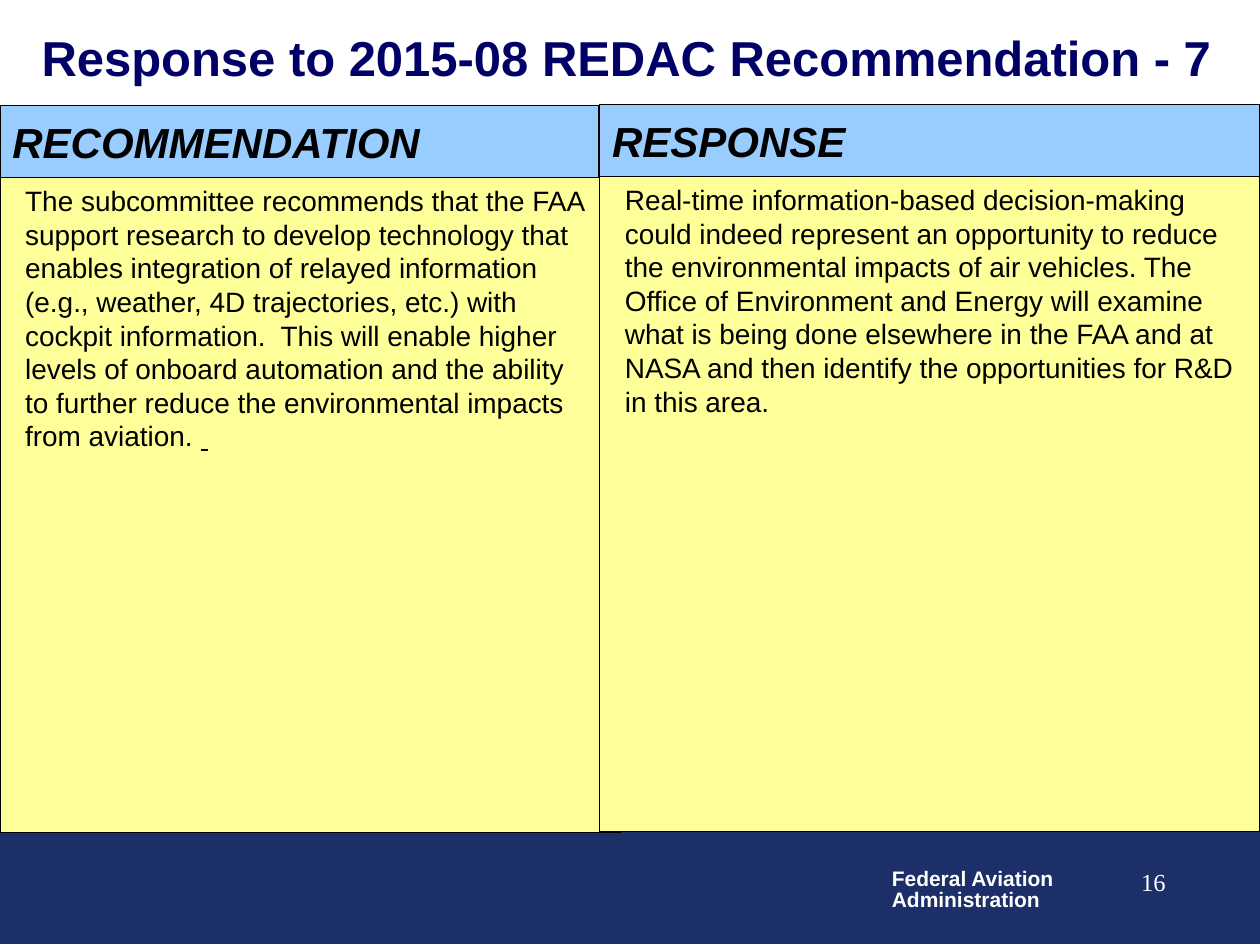
from pptx import Presentation
from pptx.dml.color import RGBColor
from pptx.enum.shapes import MSO_SHAPE
from pptx.enum.text import MSO_ANCHOR, MSO_AUTO_SIZE, PP_ALIGN
from pptx.util import Inches, Pt

COLORS = {
    "navy": "1D2F68",
    "title": "000066",
    "header": "99CCFF",
    "panel": "FFFF99",
    "black": "000000",
    "white": "FFFFFF",
}


def color(name):
    return RGBColor.from_string(COLORS[name])


def add_text(paragraph, text, size=16, font="Arial", fill="black", bold=False,
             italic=False, underline=False, align=PP_ALIGN.LEFT, spacing=None):
    paragraph.alignment = align
    if spacing:
        paragraph.line_spacing = spacing
    run = paragraph.add_run()
    run.text = text
    run.font.size = Pt(size)
    run.font.name = font
    run.font.bold = bold
    run.font.italic = italic
    run.font.underline = underline
    run.font.color.rgb = color(fill)


class SlideBuilder:
    def __init__(self, slide):
        self.slide = slide

    def title(self, text, box):
        shape = self.slide.shapes.title
        shape.left, shape.top, shape.width, shape.height = map(Inches, box)
        frame = shape.text_frame
        frame.auto_size = MSO_AUTO_SIZE.NONE
        frame.vertical_anchor = MSO_ANCHOR.MIDDLE
        add_text(frame.paragraphs[0], text, size=28, fill="title", bold=True)

    def rectangle(self, box, fill, line="black"):
        shape = self.slide.shapes.add_shape(MSO_SHAPE.RECTANGLE, *map(Inches, box))
        shape.shadow.inherit = False
        shape.fill.solid()
        shape.fill.fore_color.rgb = color(fill)
        shape.line.color.rgb = color(line)
        shape.line.width = Pt(0.75)
        return shape

    def panel(self, box, text):
        frame = self.rectangle(box, "panel").text_frame
        frame.margin_left = frame.margin_right = Inches(0.2)
        frame.vertical_anchor = MSO_ANCHOR.TOP
        frame.word_wrap = True
        add_text(frame.paragraphs[0], text)
        return frame

    def header(self, box, text):
        frame = self.rectangle(box, "header").text_frame
        frame.vertical_anchor = MSO_ANCHOR.MIDDLE
        frame.word_wrap = True
        add_text(frame.paragraphs[0], text, size=24, bold=True, italic=True)

    def text_box(self, box, lines, wrap=True, **style):
        frame = self.slide.shapes.add_textbox(*map(Inches, box)).text_frame
        frame.word_wrap = wrap
        for index, line in enumerate(lines):
            paragraph = frame.add_paragraph() if index else frame.paragraphs[0]
            add_text(paragraph, line, **style)


def main():
    presentation = Presentation()
    presentation.slide_width = Inches(10)
    presentation.slide_height = Inches(7.5)
    builder = SlideBuilder(presentation.slides.add_slide(presentation.slide_layouts[5]))

    # Footer band with agency name
    builder.rectangle((0, 6.6, 10, 0.89), "navy", line="navy")
    builder.text_box((6.98, 6.85, 1.5, 0.44), ["Federal Aviation", "Administration"],
                     wrap=False, size=12, fill="white", bold=True, spacing=0.85)

    # Recommendation and response panels
    recommendation = builder.panel(
        (0, 1.41, 4.92, 5.2),
        "The subcommittee recommends that the FAA support research to develop "
        "technology that enables integration of relayed information (e.g., weather, "
        "4D trajectories, etc.) with cockpit information.  This will enable higher "
        "levels of onboard automation and the ability to further reduce the "
        "environmental impacts from aviation. ")
    add_text(recommendation.paragraphs[0], " ", underline=True)
    builder.panel(
        (4.76, 1.4, 5.24, 5.2),
        "Real-time information-based decision-making could indeed represent an "
        "opportunity to reduce the environmental impacts of air vehicles. The Office "
        "of Environment and Energy will examine what is being done elsewhere in the "
        "FAA and at NASA and then identify the opportunities for R&D in this area.")

    # Title and page number
    builder.title("Response to 2015-08 REDAC Recommendation - 7", (0.23, 0.12, 9.64, 0.67))
    builder.text_box((7.27, 6.83, 2.08, 0.5), ["16"], size=14,
                     font="Times New Roman", fill="white", align=PP_ALIGN.RIGHT)

    # Column headers
    builder.header((0, 0.84, 4.75, 0.57), "RECOMMENDATION")
    builder.header((4.76, 0.83, 5.24, 0.57), "RESPONSE")

    presentation.save("out.pptx")


if __name__ == "__main__":
    main()
